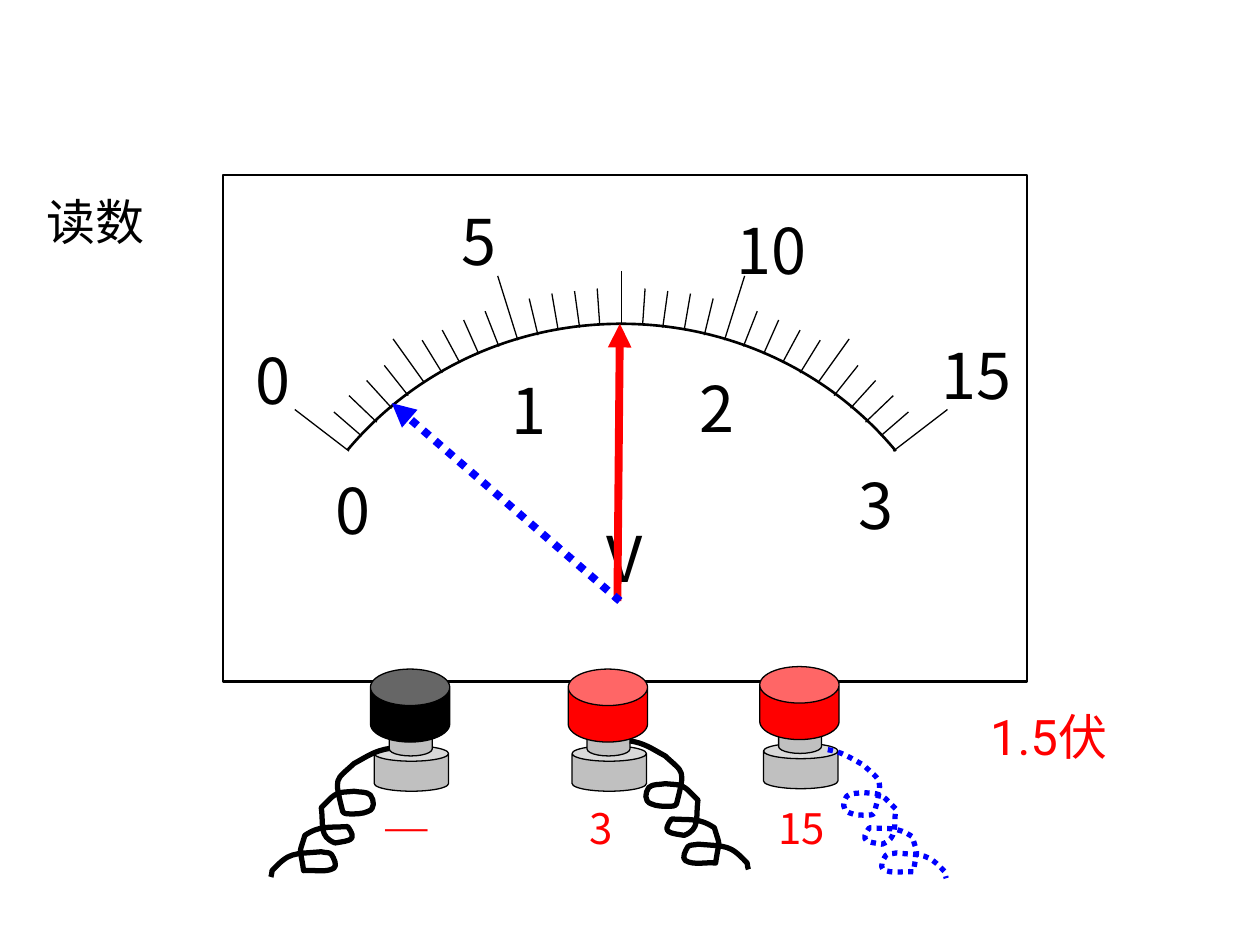
import copy

import pptx
import pptx.util
import pptx.dml.color
import pptx.enum.dml
import pptx.enum.shapes
import pptx.enum.text
import pptx.oxml.ns
from lxml import etree

Inches, Pt = pptx.util.Inches, pptx.util.Pt
MSO_SHAPE = pptx.enum.shapes.MSO_SHAPE
ALIGN = pptx.enum.text.PP_ALIGN
qn = pptx.oxml.ns.qn

THEME = {
    "black": "000000", "white": "FFFFFF", "red": "FF0000", "blue": "0000FF", "metal": "C0C0C0",
    "dial_font": "Noto Sans CJK SC", "text_font": "Roboto", "dash_font": "Times New Roman",
    "dial_size": 36, "text_size": 28, "terminal_size": 24,
    "thin": 0.75, "outline": 1.5, "wire": 3, "needle": 4.5,
}

# Content (lengths in inches)
HEADING = ("读数", (0.27, 1.47, 1.1, 0.57))
READING = ("1.5伏", (7.76, 5.56, 1.34, 0.57))
DIAL_FRAME = (1.77, 1.39, 6.38, 4.02)
DIAL_AXIS = 4.93
DIAL_LABELS = [("V", 4.56, 4.07, 0.8, 0.88)] + [
    (text, x, y, 0.4, 0.54) for text, x, y in [
        ("5", 3.6, 1.56), ("0", 1.97, 2.66), ("3", 6.75, 3.65), ("2", 5.49, 2.88),
        ("1", 4, 2.9), ("0", 2.6, 3.69), ("10", 5.92, 1.63), ("15", 7.55, 2.62)]]
# Left half of the scale: outer and inner end of each tick; the right half mirrors it
LEFT_TICKS = [
    (2.34, 3.25, 2.77, 3.58), (2.65, 3.27, 2.87, 3.46), (2.77, 3.14, 2.99, 3.35),
    (2.91, 3.02, 3.11, 3.24), (3.05, 2.9, 3.24, 3.14), (3.12, 2.69, 3.37, 3.04),
    (3.35, 2.7, 3.51, 2.96), (3.51, 2.62, 3.65, 2.88), (3.68, 2.54, 3.8, 2.81),
    (3.85, 2.47, 3.96, 2.75), (3.95, 2.19, 4.11, 2.7), (4.2, 2.37, 4.27, 2.66),
    (4.38, 2.33, 4.43, 2.62), (4.56, 2.31, 4.6, 2.6), (4.74, 2.29, 4.76, 2.58)]
MIDDLE_TICK = (DIAL_AXIS, 2.15, DIAL_AXIS, 2.58)
SCALE_ARC = [(2.76, 3.57), (3.29, 2.94), (4.08, 2.57), (4.93, 2.57),
             (5.78, 2.57), (6.58, 2.94), (7.11, 3.58)]
SCALE_CENTER = (DIAL_AXIS, 5.27)
# Terminal: cap corner, cap colour, label, label box, label font
TERMINALS = [
    (4.51, 5.31, "red", "3", (4.58, 6.32, 0.85, 1), "dial_font"),
    (6.03, 5.29, "red", "15", (6.08, 6.32, 0.65, 1.18), "dial_font"),
    (2.94, 5.31, "black", "—", (2.96, 6.29, 0.82, 0.93), "dash_font")]
# Terminal part: offset from the cap corner, size, ellipse depth, colour (None = cap colour)
TERMINAL_PARTS = [
    (0.03, 0.61, 0.59, 0.36, 0.339, "metal"),
    (0.15, 0.36, 0.34, 0.33, 0.333, "metal"),
    (0, 0, 0.63, 0.58, 0.5, None)]
# Coiled wire as Bezier points from its start
WIRE_CURVE = [
    (0, 0), (0.12, 0.02), (0.17, 0.06), (0.28, 0.12), (0.43, 0.26), (0.44, 0.22), (0.37, 0.5),
    (0.36, 0.52), (0.33, 0.52), (0.31, 0.52), (0.27, 0.52), (0.21, 0.52), (0.17, 0.5),
    (0.11, 0.48), (0.12, 0.41), (0.15, 0.37), (0.18, 0.34), (0.23, 0.35), (0.28, 0.34),
    (0.38, 0.35), (0.4, 0.34), (0.46, 0.39), (0.49, 0.42), (0.54, 0.47), (0.54, 0.47),
    (0.52, 0.61), (0.56, 0.7), (0.43, 0.75), (0.31, 0.73), (0.25, 0.73), (0.33, 0.62),
    (0.49, 0.63), (0.55, 0.61), (0.67, 0.69), (0.72, 0.86), (0.71, 0.76), (0.68, 0.97),
    (0.6, 0.96), (0.51, 0.99), (0.44, 0.95), (0.41, 0.93), (0.44, 0.87), (0.46, 0.84),
    (0.48, 0.82), (0.51, 0.83), (0.54, 0.82), (0.77, 0.84), (0.79, 0.82), (0.93, 0.97),
    (0.93, 0.99), (0.94, 1.02), (0.94, 1.02)]


def color(name):
    return pptx.dml.color.RGBColor.from_string(THEME[name])


def style_line(line, color_name, width_name, dotted=False):
    line.color.rgb = color(color_name)
    line.width = Pt(THEME[width_name])
    if dotted:
        line.dash_style = pptx.enum.dml.MSO_LINE.ROUND_DOT


def box(values):
    return [Inches(value) for value in values]


def add_solid(shapes, kind, place, fill_name, width_name):
    solid = shapes.add_shape(kind, *box(place))
    solid.shadow.inherit = False
    solid.fill.solid()
    solid.fill.fore_color.rgb = color(fill_name)
    style_line(solid.line, "black", width_name)
    return solid


def add_line(shapes, ends, color_name, width_name, dotted=False, arrow=False):
    line = shapes.add_connector(pptx.enum.shapes.MSO_CONNECTOR.STRAIGHT, *box(ends))
    style_line(line.line, color_name, width_name, dotted)
    properties = line._element.spPr
    if arrow:
        etree.SubElement(properties.find(qn("a:ln")), qn("a:tailEnd"), type="triangle")
    etree.SubElement(properties, qn("a:effectLst"))


def add_curve(shapes, points, color_name, width_name, dotted=False, center=None):
    """Draw joined cubic Bezier curves; a center adds the unstroked sector below the arc."""
    corners = [box(point) for point in points + ([center] if center else [])]
    builder = shapes.build_freeform(*corners[0])
    builder.add_line_segments(corners[1:], close=False)
    curve = builder.convert_to_shape()
    curve.shadow.inherit = False
    curve.fill.background()
    style_line(curve.line, color_name, width_name, dotted)

    # Turn every three straight segments into one Bezier segment
    outline = next(curve._element.iter(qn("a:path")))
    segments = outline.findall(qn("a:lnTo"))
    for start in range(0, len(points) - 1, 3):
        bezier = etree.Element(qn("a:cubicBezTo"))
        segments[start].addprevious(bezier)
        for segment in segments[start:start + 3]:
            bezier.append(segment[0])
            outline.remove(segment)
    if center:
        sector = copy.deepcopy(outline)
        sector.set("stroke", "0")
        etree.SubElement(sector, qn("a:close"))
        outline.addnext(sector)
        outline.remove(segments[-1])
        outline.set("fill", "none")


def set_text(shape, text, font_name, size_name, color_name, align=ALIGN.LEFT, wrap=True):
    frame = shape.text_frame
    frame.text = text
    frame.word_wrap = wrap
    frame.auto_size = pptx.enum.text.MSO_AUTO_SIZE.NONE
    frame.vertical_anchor = pptx.enum.text.MSO_ANCHOR.TOP
    paragraph = frame.paragraphs[0]
    paragraph.alignment = align
    font = paragraph.runs[0].font
    font.name = THEME[font_name]
    font.size = Pt(THEME[size_name])
    font.color.rgb = color(color_name)


prs = pptx.Presentation()
prs.slide_width, prs.slide_height = Inches(10), Inches(7.5)
slide = prs.slides.add_slide(prs.slide_layouts[5])

# Heading
heading = slide.shapes.title
heading.left, heading.top, heading.width, heading.height = box(HEADING[1])
set_text(heading, HEADING[0], "text_font", "text_size", "black")

# Dial: frame, ticks, arc and numbers
dial = slide.shapes.add_group_shape().shapes
add_solid(dial, MSO_SHAPE.RECTANGLE, DIAL_FRAME, "white", "outline")
right_ticks = [(2 * DIAL_AXIS - x1, y1, 2 * DIAL_AXIS - x2, y2)
               for x1, y1, x2, y2 in reversed(LEFT_TICKS)]
for tick in LEFT_TICKS + [MIDDLE_TICK] + right_ticks:
    add_line(dial, tick, "black", "thin")
add_curve(dial, SCALE_ARC, "black", "outline", center=SCALE_CENTER)
for text, *place in DIAL_LABELS:
    set_text(dial.add_textbox(*box(place)), text, "dial_font", "dial_size", "black",
             ALIGN.CENTER, wrap=False)

# Terminals with their labels
terminals = slide.shapes.add_group_shape().shapes
for x, y, cap_color, text, place, font_name in TERMINALS:
    set_text(terminals.add_textbox(*box(place)), text, font_name, "terminal_size", "red",
             ALIGN.JUSTIFY)
    for dx, dy, width, height, depth, part_color in TERMINAL_PARTS:
        part = add_solid(terminals, MSO_SHAPE.CAN, (x + dx, y + dy, width, height),
                         part_color or cap_color, "thin")
        part.adjustments[0] = depth

# Wires, reading and needles; the first wire is mirrored
for x, y, side, wire_color, dotted in [(3.09, 5.94, -1, "black", False), (5, 5.88, 1, "black", False),
                                       (6.57, 5.95, 1, "blue", True)]:
    add_curve(slide.shapes, [(x + side * dx, y + dy) for dx, dy in WIRE_CURVE],
              wire_color, "wire", dotted)
set_text(slide.shapes.add_textbox(*box(READING[1])), READING[0], "text_font", "text_size", "red")
add_line(slide.shapes, (4.9, 4.77, 4.92, 2.57), "red", "needle", arrow=True)
add_line(slide.shapes, (4.92, 4.77, 3.11, 3.2), "blue", "needle", dotted=True, arrow=True)

prs.save("out.pptx")
